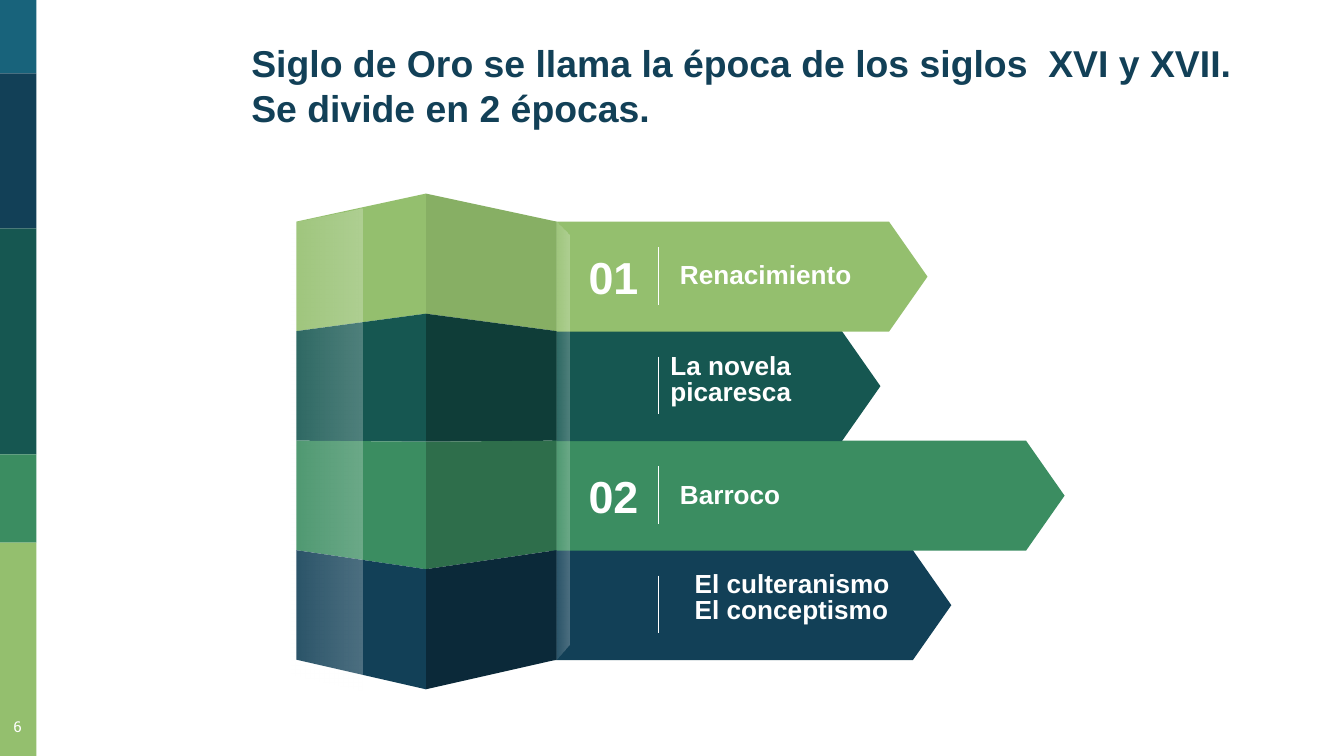
"""Build the slide on the two periods of the Siglo de Oro."""
from lxml.etree import SubElement
from pptx import Presentation
from pptx.dml.color import RGBColor
from pptx.enum.shapes import MSO_CONNECTOR as Connector, MSO_SHAPE as Shape
from pptx.enum.text import MSO_ANCHOR as Anchor, PP_ALIGN as Align
from pptx.oxml.ns import qn
from pptx.util import Cm, Pt

WHITE = RGBColor(0xFF, 0xFF, 0xFF)
BLUE = RGBColor(0x18, 0x63, 0x7B)
NAVY = RGBColor(0x12, 0x40, 0x57)
TEAL = RGBColor(0x16, 0x57, 0x51)
GREEN = RGBColor(0x3B, 0x8D, 0x61)
LIME = RGBColor(0x94, 0xBF, 0x6E)
DARK_NAVY = RGBColor(0x0B, 0x29, 0x39)
DARK_TEAL = RGBColor(0x0F, 0x3D, 0x38)
DARK_GREEN = RGBColor(0x2E, 0x6E, 0x4B)
DARK_LIME = RGBColor(0x87, 0xAF, 0x64)

SLIDE_WIDTH, SLIDE_HEIGHT = 25.4, 14.29
TITLE = "Siglo de Oro se llama la época de los siglos  XVI y XVII.\nSe divide en 2 épocas."
SIDE_WIDTH = 0.69
SIDE_BARS = [(0, BLUE), (1.39, NAVY), (4.32, TEAL), (8.59, GREEN), (10.26, LIME)]
BANDS = [
    dict(number="01", label="Renacimiento", box=(12.6, 4.62, 4.04, 1.24),
         arrow=7.09, color=LIME, shade=DARK_LIME),
    dict(number="", label="La novela picaresca", box=(12.42, 6.58, 4.04, 1.24),
         arrow=6.2, color=TEAL, shade=DARK_TEAL),
    dict(number="02", label="Barroco", box=(12.6, 8.59, 3.84, 1.6),
         arrow=9.68, color=GREEN, shade=DARK_GREEN),
    dict(number="", label="El culteranismo\nEl conceptismo", box=(12.88, 10.52, 4.65, 1.6),
         arrow=7.54, color=NAVY, shade=DARK_NAVY),
]
BAND_TOP, BAND_PITCH, BAND_HEIGHT = 4.19, 2.07, 2.08
FOLD_LEFT, FOLD_RIDGE, FOLD_RIGHT = 5.6, 8.05, 10.52
RIDGE_Y = [3.66, 5.93, 8.35, 10.76, 13.03]
EDGE_Y = [BAND_TOP + BAND_PITCH * index for index in range(5)]
ARROW_LEFT, DIVIDER_X = 10.44, 12.45
GLOSSES = [
    [(5.51, 12.75), (5.51, 4.22), (6.85, 3.94), (6.85, 13.06)],
    [(10.77, 12.17), (10.77, 4.45), (10.52, 4.19), (10.52, 12.47)],
]


def paint(shape, color):
    shape.shadow.inherit = False
    shape.line.fill.background()
    shape.fill.solid()
    shape.fill.fore_color.rgb = color


def add_block(slide, kind, box, color):
    shape = slide.shapes.add_shape(kind, *map(Cm, box))
    paint(shape, color)
    return shape


def add_polygon(slide, points, color):
    corners = [(Cm(x), Cm(y)) for x, y in points]
    builder = slide.shapes.build_freeform(*corners[0])
    builder.add_line_segments(corners[1:], close=True)
    shape = builder.convert_to_shape()
    paint(shape, color)
    return shape


def add_gloss(slide, points):
    shape = add_polygon(slide, points, WHITE)
    shape.fill.gradient()
    shape.fill.gradient_angle = 0
    for stop, position in zip(shape.fill.gradient_stops, (0, 1)):
        stop.position = position
        stop.color.rgb = WHITE
    colors = shape._element.spPr.iter(qn("a:srgbClr"))
    for color, alpha in zip(list(colors), ("10000", "25000")):
        SubElement(color, qn("a:alpha")).set("val", alpha)


def add_text(slide, text, box, size, color=WHITE, font="Arial", bold=True,
             align=Align.LEFT, anchor=Anchor.MIDDLE, margin=0.13, spacing=None):
    frame = slide.shapes.add_textbox(*map(Cm, box)).text_frame
    frame.word_wrap = True
    frame.vertical_anchor = anchor
    frame.margin_top = frame.margin_bottom = Cm(margin)
    frame.margin_left = frame.margin_right = Cm(0.25)
    frame.text = text
    for paragraph in frame.paragraphs:
        paragraph.alignment = align
        paragraph.line_spacing = spacing
        for run in paragraph.runs:
            run.font.name, run.font.size, run.font.bold = font, Pt(size), bold
            run.font.color.rgb = color


def add_divider(slide, top):
    line = slide.shapes.add_connector(
        Connector.STRAIGHT, Cm(DIVIDER_X), Cm(top), Cm(DIVIDER_X), Cm(top + 1.09))
    line.line.color.rgb = WHITE
    line.line.width = Pt(0.75)
    SubElement(line._element.spPr, qn("a:effectLst"))


def add_fold(slide, index, edge_x, color):
    add_polygon(slide, [(FOLD_RIDGE, RIDGE_Y[index]), (edge_x, EDGE_Y[index]),
                        (edge_x, EDGE_Y[index + 1]), (FOLD_RIDGE, RIDGE_Y[index + 1])], color)


def main():
    presentation = Presentation()
    presentation.slide_width, presentation.slide_height = Cm(SLIDE_WIDTH), Cm(SLIDE_HEIGHT)
    slide = presentation.slides.add_slide(presentation.slide_layouts[6])

    bottoms = [top for top, _ in SIDE_BARS[1:]] + [SLIDE_HEIGHT]
    for (top, color), bottom in zip(SIDE_BARS, bottoms):
        add_block(slide, Shape.RECTANGLE, (0, top, SIDE_WIDTH, bottom - top), color)

    for band, top in reversed(list(zip(BANDS, EDGE_Y))):
        arrow = add_block(slide, Shape.PENTAGON,
                          (ARROW_LEFT, top, band["arrow"], BAND_HEIGHT), band["color"])
        arrow.adjustments[0] = 0.35
    for index, band in enumerate(BANDS):
        add_fold(slide, index, FOLD_RIGHT, band["shade"])
        add_fold(slide, index, FOLD_LEFT, band["color"])
    for points in GLOSSES:
        add_gloss(slide, points)

    for band, top in zip(BANDS, EDGE_Y):
        if band["number"]:
            add_text(slide, band["number"], (10.77, top + 0.42, 1.65, 1.24), 24,
                     align=Align.CENTER)
        add_divider(slide, top + 0.48)
        add_text(slide, band["label"], band["box"], 14, spacing=0.83)

    add_text(slide, "6", (-0.15, 13.39, 0.97, 0.89), 8, font="Roboto Slab", bold=False,
             align=Align.CENTER, anchor=Anchor.TOP, margin=0.25)
    add_text(slide, TITLE, (4.5, 0.51, 22.2, 2.46), 20, color=NAVY,
             anchor=Anchor.TOP, margin=0.25)
    presentation.save("out.pptx")


if __name__ == "__main__":
    main()
